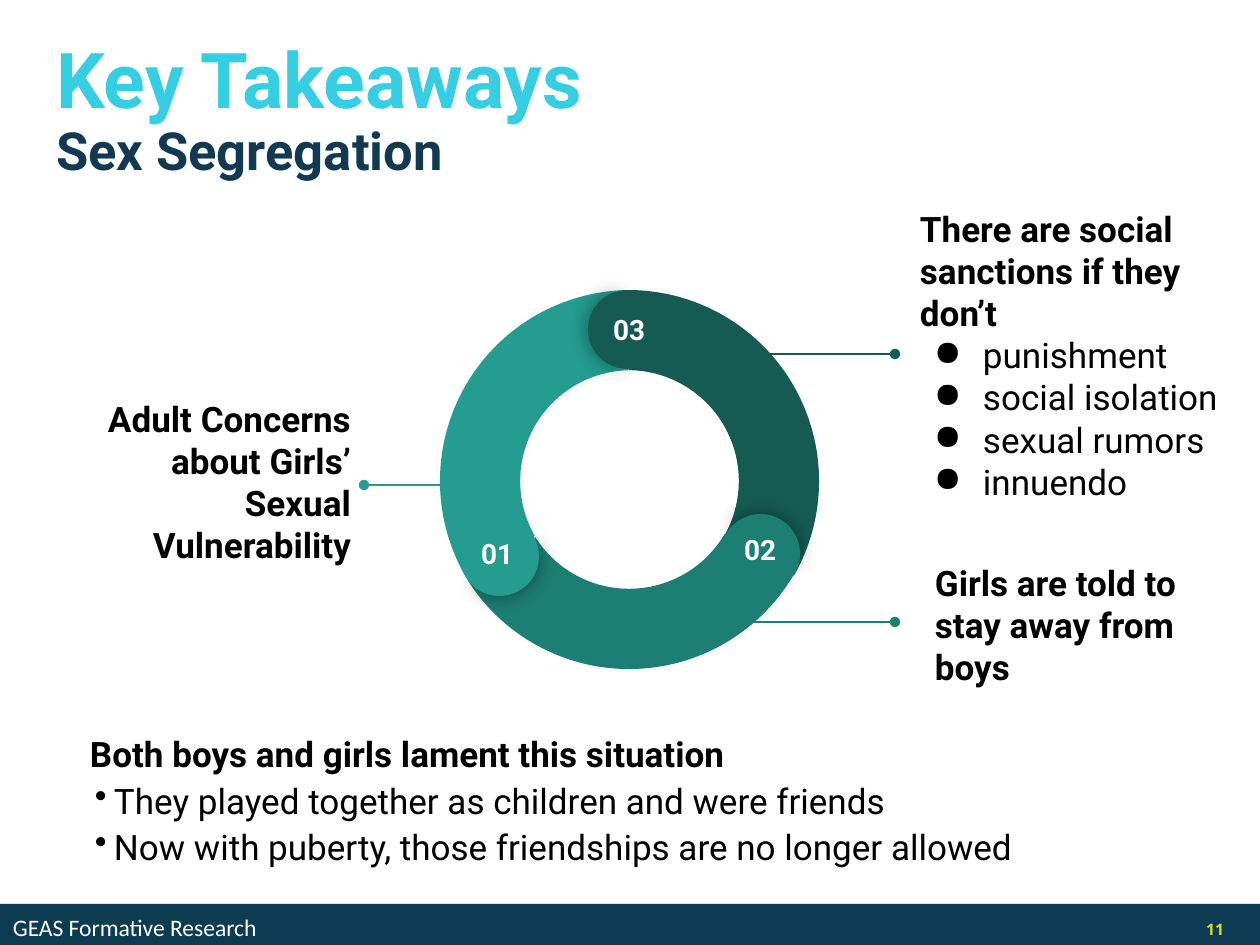
from lxml.etree import SubElement
from pptx import Presentation
from pptx.dml.color import RGBColor
from pptx.enum.shapes import MSO_CONNECTOR, MSO_SHAPE as SHAPE
from pptx.enum.text import MSO_ANCHOR as ANCHOR, PP_ALIGN as ALIGN
from pptx.oxml.ns import qn
from pptx.util import Emu, Pt

COLORS = {
    "black": "000000", "white": "FFFFFF", "cyan": "35CEE2", "navy": "113951",
    "footer": "0D3B52", "lime": "D9E021",
    "light": "249C90", "mid": "1D7E74", "dark": "155B54",
}
RGB = {name: RGBColor.from_string(value) for name, value in COLORS.items()}


def px(n):
    return Emu(round(n * 914400 / 126))


def write(shape, lines, align=ALIGN.LEFT, anchor=ANCHOR.MIDDLE, font="Roboto", inset=13, spacing=None):
    frame = shape.text_frame
    frame.word_wrap = True
    frame.vertical_anchor = anchor
    frame.margin_left = frame.margin_right = px(13)
    frame.margin_top = frame.margin_bottom = px(inset)
    frame.text = "\n".join(line[0] for line in lines)
    for paragraph, (_, size, color, bold) in zip(frame.paragraphs, lines):
        paragraph.alignment = align
        paragraph.line_spacing = spacing
        run_font = paragraph.runs[0].font
        run_font.name = font
        run_font.size = Pt(size)
        run_font.bold = bold
        run_font.color.rgb = RGB[color]
    return frame.paragraphs


prs = Presentation()
prs.slide_width, prs.slide_height = px(1260), px(945)
slide = prs.slides.add_slide(prs.slide_layouts[6])
shapes = slide.shapes

leaders = [
    ("light", 451, 364, 485),
    ("dark", 718, 895, 354),
    ("mid", 718, 895, 622),
]
for color, start, end, y in leaders:
    leader = shapes.add_connector(MSO_CONNECTOR.STRAIGHT, px(start), px(y), px(end), px(y))
    leader.line.color.rgb = RGB[color]
    leader.line.width = Pt(0.75)
    SubElement(leader.line._get_or_add_ln(), qn("a:tailEnd"), type="oval")
    SubElement(leader._element.spPr, qn("a:effectLst"))

arcs = [
    ("dark", 437, 290, 60, 197.82),
    ("mid", 438, 287, 180, 196.63),
    ("light", 440, 290, 300, 197.03),
]
caps = [
    ("light", 460, 517, 240.6, 60),
    ("dark", 588, 290, 0.7, 180),
    ("mid", 721, 514, 120.7, 300),
]
ring = [(SHAPE.BLOCK_ARC, color, x, y, 382, turn, (126.22, end, 0.21), False)
        for color, x, y, turn, end in arcs]
for color, x, y, shaded_turn, plain_turn in caps:
    ring.append((SHAPE.PIE, color, x, y, 79, shaded_turn, (61.9, 149.96), True))
    ring.append((SHAPE.PIE, color, x, y, 79, plain_turn, (40.28, 171.84), False))

for kind, color, x, y, size, turn, angles, shaded in ring:
    segment = shapes.add_shape(kind, px(x), px(y), px(size), px(size))
    segment.rotation = turn
    for i, value in enumerate(angles):
        segment.adjustments[i] = value
    segment.fill.solid()
    segment.fill.fore_color.rgb = RGB[color]
    segment.line.fill.background()
    segment.shadow.inherit = False
    if shaded:
        effects = segment._element.spPr.find(qn("a:effectLst"))
        glow = SubElement(effects, qn("a:outerShdw"), blurRad=str(Pt(11.2)), dist="0", dir="0",
                          algn="ctr", rotWithShape="0")
        tint = SubElement(glow, qn("a:srgbClr"), val=COLORS["black"])
        SubElement(tint, qn("a:alpha"), val="43000")

for number, x, y in [("03 ", 597, 300), ("01 ", 465, 524), ("02 ", 728, 520)]:
    label = shapes.add_textbox(px(x), px(y), px(71), px(37))
    write(label, [(number, 16, "white", True)], ALIGN.CENTER, ANCHOR.TOP)

concerns = shapes.add_textbox(px(44), px(393), px(320), px(178))
write(concerns, [("Adult Concerns about Girls’ Sexual Vulnerability", 20, "black", True)], ALIGN.RIGHT)

told = shapes.add_textbox(px(922), px(536), px(292), px(178))
write(told, [("Girls are told to stay away from boys", 20, "black", True)])

bulleted = [
    ((907, 266, 334, 178), None, 0, "●", 63, 49,
     ["There are social sanctions if they don’t", "punishment", "social isolation",
      "sexual rumors", "innuendo"]),
    ((77, 697, 1116, 214), 0.8, 7.5, "•", 24, 19,
     ["Both boys and girls lament this situation",
      "They played together as children and were friends",
      "Now with puberty, those friendships are no longer allowed"]),
]
for box, spacing, before, bullet, margin, hang, texts in bulleted:
    takeaway = shapes.add_textbox(*map(px, box))
    lines = [(text, 20, "black", i == 0) for i, text in enumerate(texts)]
    for i, paragraph in enumerate(write(takeaway, lines, spacing=spacing)):
        paragraph.space_before = Pt(before)
        if i:
            props = paragraph._p.get_or_add_pPr()
            props.set("marL", str(px(margin)))
            props.set("indent", str(-px(hang)))
            bullet_color = SubElement(props, qn("a:buClr"))
            SubElement(bullet_color, qn("a:srgbClr"), val=COLORS["black"])
            SubElement(props, qn("a:buChar"), char=bullet)

footer = shapes.add_shape(SHAPE.RECTANGLE, px(0), px(904), px(1260), px(47))
footer.fill.solid()
footer.fill.fore_color.rgb = RGB["footer"]
footer.line.fill.background()
footer.shadow.inherit = False
write(footer, [("GEAS Formative Research", 13.5, "white", False)], font="Calibri", inset=6)

page_number = shapes.add_textbox(px(1154), px(910), px(83), px(38))
write(page_number, [("11", 9, "lime", True)], ALIGN.RIGHT, font="Open Sans", inset=6)

title = shapes.add_textbox(px(43), px(20), px(1202), px(183))
write(title, [("Key Takeaways", 44, "cyan", True), ("Sex Segregation", 30, "navy", True)], spacing=0.9)

prs.save("out.pptx")
